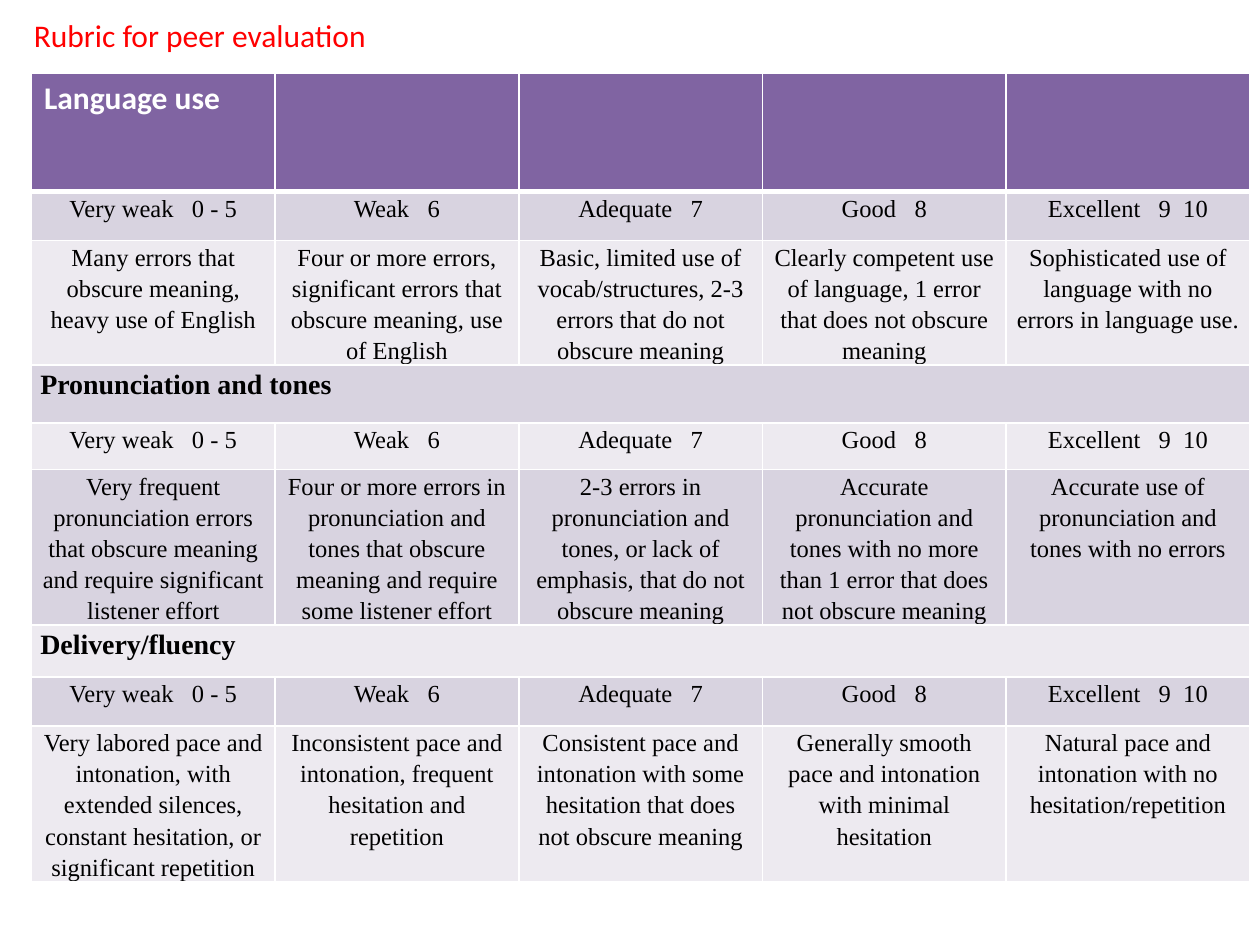
from lxml import etree
from pptx import Presentation
from pptx import util as u
from pptx.dml.color import RGBColor
from pptx.enum import text
from pptx.oxml.ns import qn

WHITE = RGBColor(0xFF, 0xFF, 0xFF)
BLACK = RGBColor(0, 0, 0)
RED = RGBColor(0xFF, 0, 0)
PURPLE = RGBColor(0x80, 0x64, 0xA2)
LILAC = RGBColor(0xD8, 0xD3, 0xE0)
PALE = RGBColor(0xED, 0xEA, 0xF0)

# Rubric content: each section has a heading and one description per level
LEVELS = ["Very weak   0 - 5", "Weak   6", "Adequate   7", "Good   8", "Excellent   9  10"]
SECTIONS = [
    ("Language use", [
        "Many errors that obscure meaning, heavy use of English",
        "Four or more errors, significant errors that obscure meaning, use of English",
        "Basic, limited use of vocab/structures, 2-3 errors that do not obscure meaning",
        "Clearly competent use of language, 1 error that does not obscure meaning",
        "Sophisticated use of language with no errors in language use."]),
    ("Pronunciation and tones", [
        "Very frequent pronunciation errors that obscure meaning and require significant listener effort",
        "Four or more errors in pronunciation and tones that obscure meaning and require some listener effort",
        "2-3 errors in pronunciation and tones, or lack of emphasis, that do not obscure meaning",
        "Accurate pronunciation and tones with no more than 1 error that does not obscure meaning",
        "Accurate use of pronunciation and tones with no errors"]),
    ("Delivery/fluency", [
        "Very labored pace and intonation, with extended silences, constant hesitation, or significant repetition",
        "Inconsistent pace and intonation, frequent hesitation and repetition",
        "Consistent pace and intonation with some hesitation that does not obscure meaning",
        "Generally smooth pace and intonation with minimal hesitation",
        "Natural pace and intonation with no hesitation/repetition"]),
]
ROW_HEIGHTS = [0.94, 0.39, 0.94, 0.46, 0.37, 0.94, 0.41, 0.39, 0.94]


def write(frame, words, size=14, font="Times New Roman", color=BLACK,
          bold=False, align=text.PP_ALIGN.LEFT, spacing=None):
    para = frame.paragraphs[0]
    para.alignment = align
    para.line_spacing = spacing
    span = para.add_run()
    span.text = words
    span.font.size = u.Pt(size)
    span.font.name = font
    span.font.color.rgb = color
    span.font.bold = bold


class RubricPage:
    body = {"spacing": 1.15}

    def __init__(self, deck):
        self.page = deck.slides.add_slide(deck.slide_layouts[6])

    def title(self, words, left, top, width, height):
        box = self.page.shapes.add_textbox(*map(u.Inches, (left, top, width, height)))
        box.text_frame.word_wrap = False
        box.text_frame.auto_size = text.MSO_AUTO_SIZE.SHAPE_TO_FIT_TEXT
        write(box.text_frame, words, size=18, font="Calibri", color=RED)

    def table(self, left, top, width, heights, columns):
        frame = self.page.shapes.add_table(
            len(heights), columns, *map(u.Inches, (left, top, width, sum(heights))))
        for column in frame.table.columns:
            column.width = u.Inches(width / columns)
        for row, height in zip(frame.table.rows, heights):
            row.height = u.Inches(height)
        return frame.table

    def paint(self, cell, fill, bottom=1):
        properties = cell._tc.get_or_add_tcPr()
        for side, points in (("L", 1), ("R", 1), ("T", 1), ("B", bottom)):
            line = etree.SubElement(properties, qn(f"a:ln{side}"), w=str(u.Pt(points)))
            solid = etree.SubElement(line, qn("a:solidFill"))
            etree.SubElement(solid, qn("a:srgbClr"), val=str(WHITE))
        cell.fill.solid()
        cell.fill.fore_color.rgb = fill

    def body_cell(self, cell, words, **style):
        cell.margin_left = cell.margin_right = u.Inches(0.07)
        cell.margin_top = cell.margin_bottom = 0
        write(cell.text_frame, words, **self.body, **style)


def main():
    deck = Presentation()
    deck.slide_width, deck.slide_height = u.Inches(10), u.Inches(7.5)
    rubric = RubricPage(deck)

    # Table grid with a purple header and alternating bands
    table = rubric.table(0.25, 0.58, 9.67, ROW_HEIGHTS, len(LEVELS))
    for index in range(len(ROW_HEIGHTS)):
        fill = PURPLE if index == 0 else LILAC if index % 2 else PALE
        for column in range(len(LEVELS)):
            rubric.paint(table.cell(index, column), fill, bottom=1 if index else 3)

    # Three rows per section: heading, levels, descriptions
    for number, (heading, descriptions) in enumerate(SECTIONS):
        first = 3 * number
        cell = table.cell(first, 0)
        if number == 0:
            write(cell.text_frame, heading, size=18, font="Calibri", color=WHITE, bold=True)
        else:
            cell.merge(table.cell(first, len(LEVELS) - 1))
            rubric.body_cell(cell, heading, size=16, bold=True)
        for offset, entries in enumerate((LEVELS, descriptions), start=1):
            for column, words in enumerate(entries):
                rubric.body_cell(table.cell(first + offset, column), words,
                                 align=text.PP_ALIGN.CENTER)

    # Page title
    rubric.title("Rubric for peer evaluation", 0.17, 0.08, 2.87, 0.4)
    deck.save("out.pptx")


if __name__ == "__main__":
    main()
